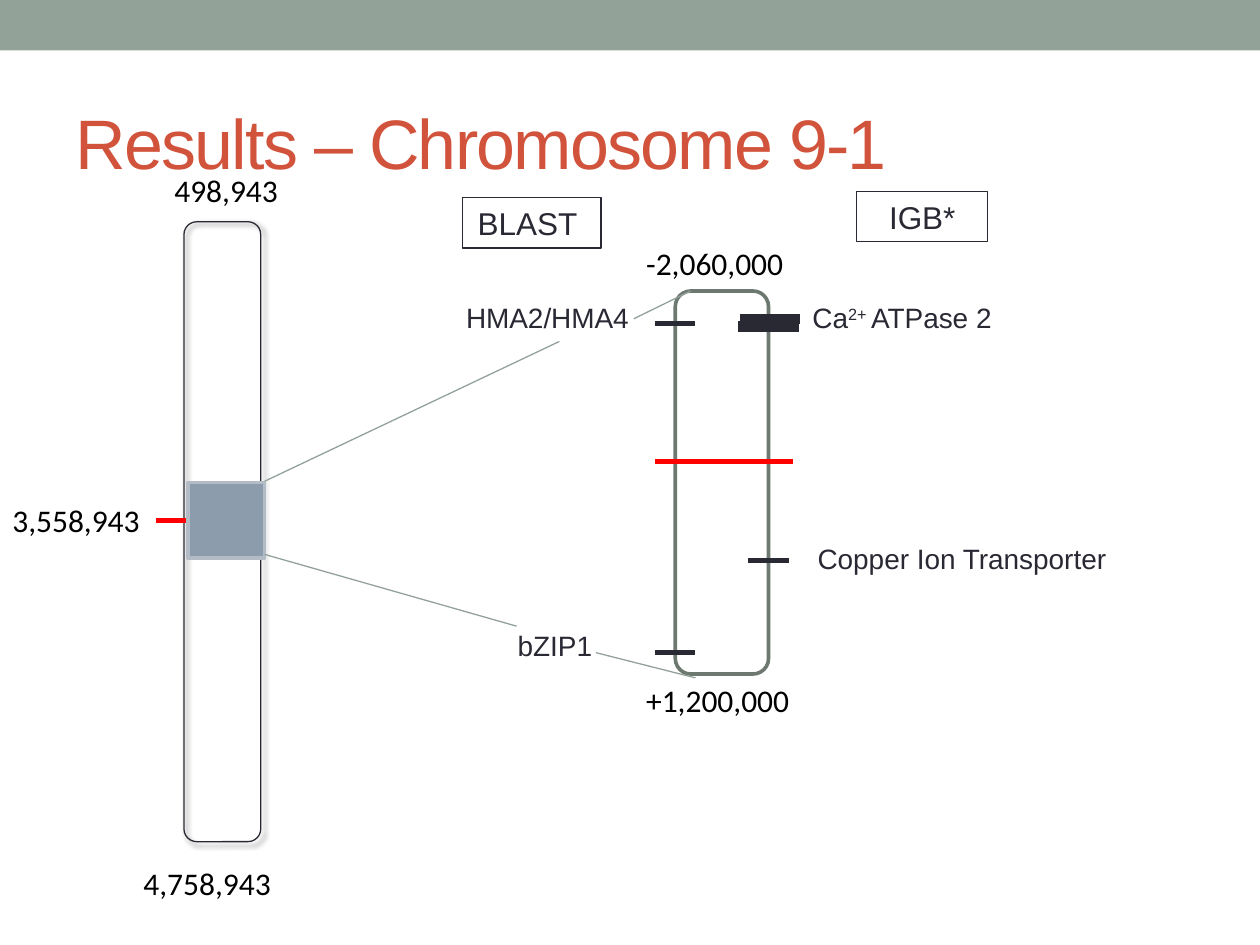
from lxml import etree
from pptx import Presentation
from pptx import util as u
from pptx.dml import color
from pptx.enum import shapes, text
from pptx.oxml import ns

PX = u.Inches(1) // 100
COLORS = {
    "band": "93A299",
    "title": "D2533C",
    "ink": "292934",
    "black": "000000",
    "marker": "FF0000",
    "region": "6D7871",
    "white": "FFFFFF",
    "window": "8C9CAD",
    "window_edge": "B3BBC6",
}


def rgb(name):
    return color.RGBColor.from_string(COLORS[name])


def write(frame, content, size=16, font="Arial", ink="ink", align="LEFT",
          anchor="TOP", spacing=None):
    frame.word_wrap = True
    frame.vertical_anchor = getattr(text.MSO_ANCHOR, anchor)
    paragraph = frame.paragraphs[0]
    paragraph.alignment = getattr(text.PP_ALIGN, align)
    parts = [(content, 0)] if isinstance(content, str) else content
    for words, raised in parts:
        run = paragraph.add_run()
        run.text = words
        run.font.size = u.Pt(size)
        run.font.name = font
        run.font.color.rgb = rgb(ink)
        properties = run._r.get_or_add_rPr()
        if raised:
            properties.set("baseline", str(raised * 1000))
        if spacing is not None:
            properties.set("spc", str(spacing * 100))


class Diagram:
    def __init__(self, slide):
        self.slide = slide
        self.position_style = {"size": 18, "font": "Calibri", "ink": "black"}

    def title(self, content, *box):
        heading = self.slide.shapes.title
        heading.left, heading.top, heading.width, heading.height = (
            v * PX for v in box)
        write(heading.text_frame, content, size=40, ink="title",
              anchor="MIDDLE", spacing=-1)
        heading.text_frame.auto_size = text.MSO_AUTO_SIZE.NONE

    def block(self, *box, kind="RECTANGLE", fill=None, line=None, width=0.75):
        block = self.slide.shapes.add_shape(
            getattr(shapes.MSO_SHAPE, kind), *(v * PX for v in box))
        block.shadow.inherit = False
        if fill:
            block.fill.solid()
            block.fill.fore_color.rgb = rgb(fill)
        else:
            block.fill.background()
        if line:
            block.line.color.rgb = rgb(line)
            block.line.width = u.Pt(width)
        else:
            block.line.fill.background()
        return block

    def cast_shadow(self, block):
        effects = block._element.spPr.find(ns.qn("a:effectLst"))
        shadow = etree.SubElement(
            effects, ns.qn("a:outerShdw"), blurRad=str(u.Pt(3)),
            dist=str(u.Pt(2)), dir=str(45 * 60000), algn="tl", rotWithShape="0")
        tint = etree.SubElement(shadow, ns.qn("a:srgbClr"), val=COLORS["black"])
        etree.SubElement(tint, ns.qn("a:alpha"), val="60000")

    def heading_box(self, content, *box):
        block = self.block(*box, line="ink")
        write(block.text_frame, content, size=18, align="CENTER")

    def label(self, content, *box, **style):
        label = self.slide.shapes.add_textbox(*(v * PX for v in box))
        write(label.text_frame, content, **style)
        label.text_frame.auto_size = text.MSO_AUTO_SIZE.SHAPE_TO_FIT_TEXT

    def position(self, content, *box, **style):
        self.label(content, *box, **self.position_style, **style)

    def line(self, *ends, ink="ink", width=3):
        line = self.slide.shapes.add_connector(
            shapes.MSO_CONNECTOR.STRAIGHT, *(v * PX for v in ends))
        line.line.color.rgb = rgb(ink)
        line.line.width = u.Pt(width)
        etree.SubElement(line._element.spPr, ns.qn("a:effectLst"))
        return line


def main():
    deck = Presentation()
    deck.slide_width, deck.slide_height = 1000 * PX, 750 * PX
    diagram = Diagram(deck.slides.add_slide(deck.slide_layouts[5]))

    diagram.block(0, 0, 1000, 40, fill="band")
    diagram.title("Results – Chromosome 9-1", 50, 58, 900, 108)

    chromosome = diagram.block(146, 176, 61, 492, kind="ROUNDED_RECTANGLE",
                               line="ink")
    diagram.cast_shadow(chromosome)
    locus = diagram.line(124, 413, 210, 413, ink="marker")
    diagram.block(536, 231, 74, 304, kind="ROUNDED_RECTANGLE",
                  fill="white", line="region", width=2.08)
    window = diagram.block(149, 383, 61, 60, fill="window",
                           line="window_edge", width=2.08)
    locus.end_connect(window, 3)

    diagram.heading_box("IGB*", 680, 152, 104, 40)
    diagram.heading_box("BLAST ", 367, 157, 110, 40)

    diagram.position("498,943", 107, 131, 145, 40, align="CENTER")
    for content, left, top, width in [
        ("3,558,943", 0, 393, 134),
        ("4,758,943", 104, 681, 145),
        ("-2,060,000", 503, 189, 141),
        ("+1,200,000", 503, 536, 177),
    ]:
        diagram.position(content, left, top, width, 40)

    for gene, left, top, width in [
        ("HMA2/HMA4", 360, 234, 165),
        ("bZIP1", 401, 494, 165),
        ([("Ca", 0), ("2+ ", 30), ("ATPase 2", 0)], 635, 234, 256),
        ("Copper Ion Transporter", 639, 425, 252),
    ]:
        diagram.label(gene, left, top, width, 37)

    diagram.line(520, 366, 629, 366, ink="marker")
    for left, level in [(520, 257), (520, 518), (594, 445)]:
        diagram.line(left, level, left + 32, level)

    for zoom_edge in [
        (210, 440, 410, 497),
        (210, 382, 444, 271),
        (473, 518, 552, 538),
        (503, 253, 548, 231),
    ]:
        diagram.line(*zoom_edge, ink="band", width=0.75)

    for left, level in [(587, 253), (586, 259)]:
        diagram.line(left, level, left + 48, level, width=6)

    deck.save("out.pptx")


if __name__ == "__main__":
    main()
